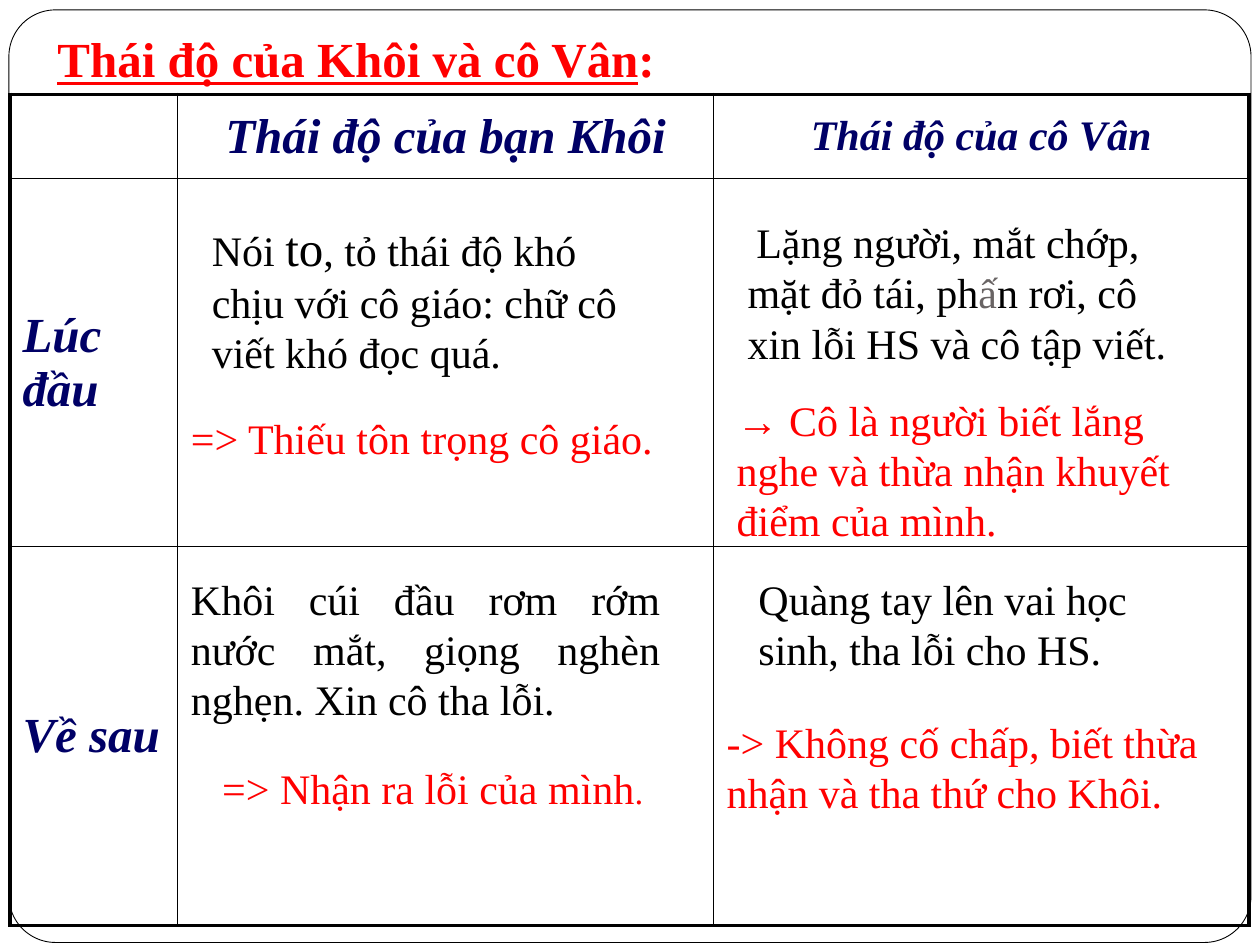
from lxml import etree
from pptx import Presentation
from pptx.dml.color import RGBColor
from pptx.enum.shapes import MSO_SHAPE
from pptx.enum.text import MSO_ANCHOR, PP_ALIGN
from pptx.oxml.ns import qn
from pptx.util import Cm, Pt

ROUNDED = MSO_SHAPE.ROUNDED_RECTANGLE
TOP, MIDDLE = MSO_ANCHOR.TOP, MSO_ANCHOR.MIDDLE
LEFT, CENTER, JUSTIFY = PP_ALIGN.LEFT, PP_ALIGN.CENTER, PP_ALIGN.JUSTIFY

COLORS = {
    "paper": "FFFFFF",
    "ink": "000000",
    "heading": "000066",
    "accent": "FF0000",
    "muted": "696464",
}
OUTER, INNER = 2.25, 1
HEADING = {"bold": True, "italic": True}


class SlideBuilder:
    def __init__(self, page, font="Times New Roman", size=24):
        self.page = page
        self.font = font
        self.size = size

    def color(self, name):
        return RGBColor.from_string(COLORS[name])

    def add_spans(self, para, spans, color, align=LEFT):
        """Add spans, each a (text, format values) pair, to a paragraph."""
        para.alignment = align
        for text, changes in spans:
            values = {"name": self.font, "size": self.size, "color": color, **changes}
            span = para.add_run()
            span.text = text
            span.font.color.rgb = self.color(values.pop("color"))
            values["size"] = Pt(values["size"])
            for key, value in values.items():
                setattr(span.font, key, value)

    def frame(self, left, top, width, height):
        shape = self.page.shapes.add_shape(
            ROUNDED, Cm(left), Cm(top), Cm(width), Cm(height))
        shape.adjustments[0] = 0.05
        shape.shadow.inherit = False
        shape.fill.solid()
        shape.fill.fore_color.rgb = self.color("paper")
        shape.line.color.rgb = self.color("ink")
        shape.line.width = Pt(0.5)

    def text(self, area, spans, color="ink", align=LEFT, anchor=TOP):
        box = self.page.shapes.add_textbox(*map(Cm, area))
        box.text_frame.word_wrap = True
        box.text_frame.vertical_anchor = anchor
        self.add_spans(box.text_frame.paragraphs[0], spans, color, align)

    def borders(self, cell, widths):
        properties = cell._tc.get_or_add_tcPr()
        for side, width in zip("LRTB", widths):
            line = etree.SubElement(properties, qn(f"a:ln{side}"), w=str(Pt(width)))
            fill = etree.SubElement(line, qn("a:solidFill"))
            etree.SubElement(fill, qn("a:srgbClr"), val=COLORS["ink"])

    def table(self, left, top, widths, heights, labels):
        """Draw a grid with a thick outline; labels maps (row, column) to (text, size, align)."""
        table = self.page.shapes.add_table(
            len(heights), len(widths), Cm(left), Cm(top),
            Cm(sum(widths)), Cm(sum(heights))).table
        table.first_row = table.horz_banding = False
        for column, width in zip(table.columns, widths):
            column.width = Cm(width)
        last_row, last_column = len(heights) - 1, len(widths) - 1
        for r, height in enumerate(heights):
            table.rows[r].height = Cm(height)
            for c in range(len(widths)):
                cell = table.cell(r, c)
                on_edge = (c == 0, c == last_column, r == 0, r == last_row)
                self.borders(cell, [OUTER if edge else INNER for edge in on_edge])
                cell.fill.background()
                cell.vertical_anchor = MIDDLE
                if (r, c) in labels:
                    text, size, align = labels[r, c]
                    self.add_spans(cell.text_frame.paragraphs[0],
                                   [(text, {"size": size, **HEADING})], "heading", align)


def main():
    deck = Presentation()
    deck.slide_width, deck.slide_height = Cm(25.4), Cm(19.05)
    builder = SlideBuilder(deck.slides.add_slide(deck.slide_layouts[6]))

    builder.frame(0.18, 0.2, 25.04, 18.8)
    builder.table(0.2, 1.9, [3.38, 10.8, 10.8], [1.7, 7.42, 7.64], {
        (0, 1): ("Thái độ của bạn Khôi", 28, CENTER),
        (0, 2): ("Thái độ của cô Vân", 24, CENTER),
        (1, 0): ("Lúc đầu", 28, LEFT),
        (2, 0): ("Về sau", 28, LEFT),
    })

    title = {"size": 28, "bold": True}
    builder.text((0.91, 0.46, 24.49, 1.45), [
        ("Thái độ của Khôi và cô Vân", {**title, "underline": True}),
        (":", title),
    ], "accent")

    # Khôi at first, then later
    builder.text((4.02, 4.24, 9.4, 3.5), [
        ("Nói ", {}),
        ("to", {"size": 28}),
        (", tỏ thái độ khó chịu với cô giáo: chữ cô viết khó đọc quá.", {}),
    ], anchor=MIDDLE)
    builder.text((3.6, 8.2, 10.36, 1.3),
                 [("=> Thiếu tôn trọng cô giáo.", {})], "accent")
    builder.text((3.6, 11.43, 9.96, 3.33), [
        ("Khôi cúi đầu rơm rớm nước mắt, giọng nghèn nghẹn. Xin cô tha lỗi.", {}),
    ], align=JUSTIFY)
    builder.text((4.23, 15.24, 10.8, 2.57), [
        ("=> Nhận ra lỗi của mình", {}),
        (".", {"size": 20}),
    ], "accent")

    # Cô Vân at first, then later
    builder.text((14.82, 4.24, 9.53, 3.33), [
        (" ", {"size": 20}),
        ("Lặng người, mắt chớp, mặt đỏ tái, ph", {}),
        ("ấ", {"color": "muted"}),
        ("n rơi, cô xin lỗi HS và cô tập viết.", {}),
    ])
    builder.text((14.6, 7.82, 9.73, 3.33), [
        ("→ Cô là người biết lắng nghe và thừa nhận khuyết điểm của mình.", {}),
    ], "accent")
    builder.text((15.04, 11.43, 9.1, 2.31),
                 [("Quàng tay lên vai học sinh, tha lỗi cho HS.", {})])
    builder.text((14.4, 14.32, 10.16, 2.31), [
        ("-> Không cố chấp, biết thừa nhận và tha thứ cho Khôi.", {}),
    ], "accent")

    deck.save("out.pptx")


if __name__ == "__main__":
    main()
